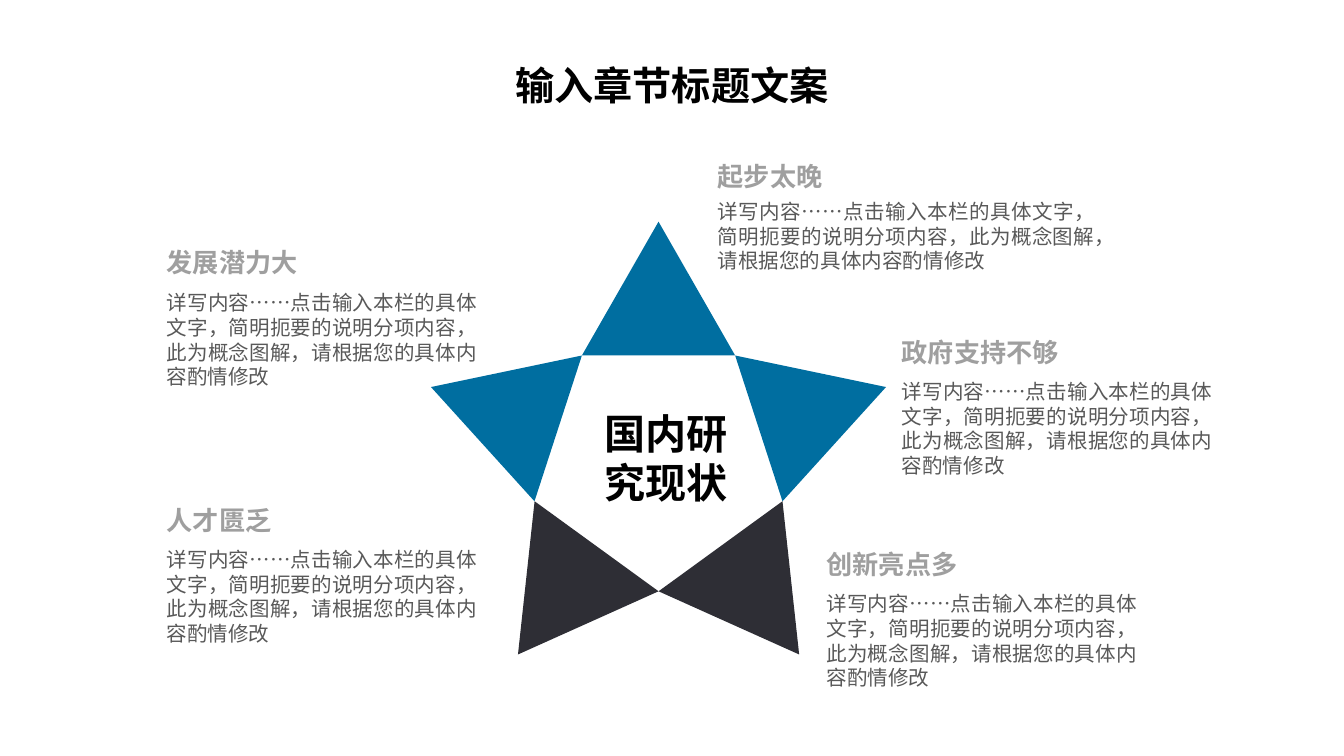
from math import cos, pi, sin

from lxml.etree import SubElement
from pptx import Presentation
from pptx.dml.color import RGBColor
from pptx.enum.text import MSO_AUTO_SIZE, PP_ALIGN
from pptx.oxml.ns import qn
from pptx.util import Inches, Pt

FONT = "Noto Sans CJK SC"
BLUE = RGBColor(0x00, 0x6E, 0xA0)
DARK = RGBColor(0x2E, 0x2E, 0x35)
BLACK = RGBColor(0x00, 0x00, 0x00)
BODY_GRAY = RGBColor(0x59, 0x59, 0x59)
HEADING_GRAY = RGBColor(0x9F, 0x9F, 0x9F)

DETAIL = "详写内容……点击输入本栏的具体文字，简明扼要的说明分项内容，此为概念图解，请根据您的具体内容酌情修改"

# Heading, left, top, heading width, detail offset, detail width, detail height
TOPICS = [
    ("起步太晚", 5.34, 1.19, 1.38, 0.29, 2.81, 0.56),
    ("政府支持不够", 6.71, 2.50, 1.38, 0.32, 2.31, 0.74),
    ("创新亮点多", 6.15, 4.08, 1.38, 0.32, 2.31, 0.74),
    ("人才匮乏", 1.24, 3.75, 0.99, 0.32, 2.31, 0.74),
    ("发展潜力大", 1.24, 1.83, 1.18, 0.33, 2.31, 0.74),
]

# Star points clockwise from the top
POINT_COLORS = [BLUE, BLUE, DARK, DARK, BLUE]


def add_text(page, text, left, top, width, height, size, color,
             bold=False, align=PP_ALIGN.LEFT, margins=(0, 0)):
    box = page.shapes.add_textbox(Inches(left), Inches(top), Inches(width), Inches(height))
    frame = box.text_frame
    frame.word_wrap = True
    frame.auto_size = MSO_AUTO_SIZE.SHAPE_TO_FIT_TEXT
    frame.margin_left = frame.margin_right = Inches(margins[0])
    frame.margin_top = frame.margin_bottom = Inches(margins[1])
    para = frame.paragraphs[0]
    para.alignment = align
    span = para.add_run()
    span.text = text
    span.font.name = FONT
    span.font.size = Pt(size)
    span.font.bold = bold
    span.font.color.rgb = color
    # East Asian glyphs need their own typeface entry
    SubElement(span.font._element, qn("a:ea"), typeface=FONT)


def polar(center_x, center_y, radius, turn):
    """Point on a circle; turn counts fifths of a circle clockwise from the top."""
    angle = 2 * pi * turn / 5
    return (Inches(center_x + radius * sin(angle)),
            Inches(center_y - radius * cos(angle)))


def add_star(page, center_x, center_y, outer, inner):
    for index, color in enumerate(POINT_COLORS):
        tip = polar(center_x, center_y, outer, index)
        base = [polar(center_x, center_y, inner, index + step) for step in (-0.5, 0.5)]
        builder = page.shapes.build_freeform(*tip)
        builder.add_line_segments(base, close=True)
        point = builder.convert_to_shape()
        point.shadow.inherit = False
        point.fill.solid()
        point.fill.fore_color.rgb = color
        point.line.fill.background()
    # Label in the middle of the star
    add_text(page, "国内研究现状", center_x - 0.42, center_y - 0.39, 0.95, 0.74,
             22, BLACK, bold=True, align=PP_ALIGN.CENTER)


def add_topic(page, heading, left, top, heading_width, offset, width, height):
    add_text(page, heading, left, top, heading_width, 0.24, 14, HEADING_GRAY, bold=True)
    add_text(page, DETAIL, left, top + offset, width, height, 11, BODY_GRAY,
             align=PP_ALIGN.JUSTIFY)


def main():
    deck = Presentation()
    # Widescreen, 16:9
    deck.slide_width = Inches(10)
    deck.slide_height = deck.slide_width * 9 // 16
    page = deck.slides.add_slide(deck.slide_layouts[6])

    add_star(page, 4.9, 3.43, 1.78, 0.97)
    for topic in TOPICS:
        add_topic(page, *topic)

    # Slide title
    add_text(page, "输入章节标题文案", 3.42, 0.41, 3.16, 0.45, 21, BLACK,
             bold=True, align=PP_ALIGN.CENTER, margins=(0.1, 0.05))

    deck.save("out.pptx")


if __name__ == "__main__":
    main()
